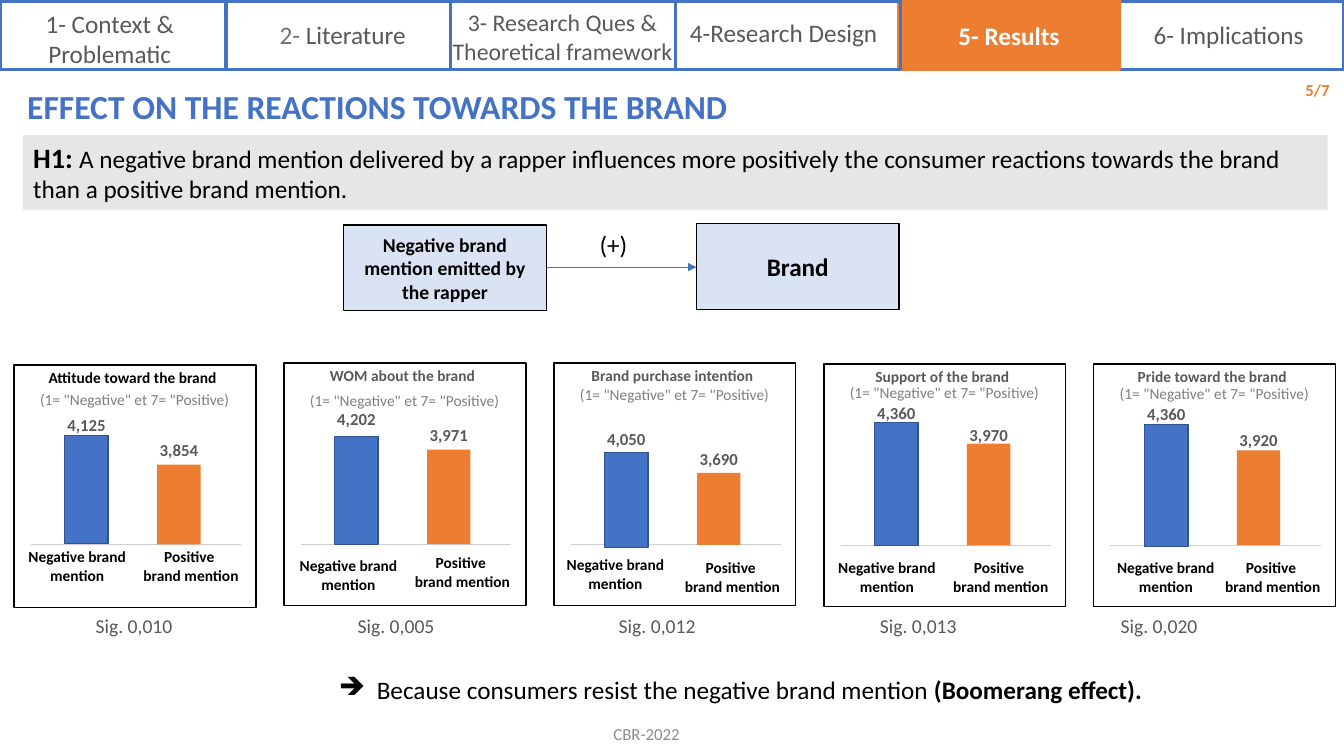
"""Build the results slide on consumer reactions towards the brand."""
from dataclasses import dataclass

from lxml import etree
from pptx import Presentation
from pptx.dml.color import RGBColor
from pptx.enum.shapes import MSO_CONNECTOR, MSO_SHAPE
from pptx.enum.text import MSO_ANCHOR, MSO_AUTO_SIZE, PP_ALIGN
from pptx.oxml.ns import qn
from pptx.util import Pt

LEFT, CENTER, RIGHT = PP_ALIGN.LEFT, PP_ALIGN.CENTER, PP_ALIGN.RIGHT
TOP, MIDDLE = MSO_ANCHOR.TOP, MSO_ANCHOR.MIDDLE
FIT_NONE = MSO_AUTO_SIZE.NONE
RECTANGLE, PROCESS = MSO_SHAPE.RECTANGLE, MSO_SHAPE.FLOWCHART_PROCESS
STRAIGHT = MSO_CONNECTOR.STRAIGHT


@dataclass(frozen=True)
class Theme:
    """Colours and type sizes of the slide."""
    font: str = "Calibri"
    blue: str = "4472C4"
    dark_blue: str = "31538F"
    pale_blue: str = "DAE3F3"
    orange: str = "ED7D31"
    black: str = "000000"
    white: str = "FFFFFF"
    text: str = "595959"
    brown_grey: str = "757070"
    mid_grey: str = "7F7F7F"
    footer_grey: str = "8C8C8C"
    axis_grey: str = "D0CECE"
    band: str = "E7E6E6"
    title: int = 24
    lead: int = 20
    body: int = 18
    tight: int = 17
    note: int = 14
    small: int = 12
    tiny: int = 11


THEME = Theme()

TITLE = "EFFECT ON THE REACTIONS TOWARDS THE BRAND"
HYPOTHESIS = [
    ("H1: ", THEME.lead, THEME.black, True),
    ("A negative brand mention delivered by a rapper influences more positively the consumer "
     "reactions towards the brand than a positive brand mention.", THEME.body, THEME.black, False),
]
CONCLUSION = [
    ("Because consumers resist the negative brand mention ", THEME.body, THEME.black, False),
    ("(Boomerang effect).", THEME.body, THEME.black, True),
]
SCALE = '(1= "Negative" et 7= "Positive)'
NEGATIVE, POSITIVE = ["Negative brand mention"], ["Positive ", "brand mention"]

# Tab: left, width, label box (left, top, width, height), label runs
TABS = [
    (0, 162, (8.6, 2.2, 139.7, 51.1),
     [("1- Context & Problematic", THEME.body, THEME.text, False)]),
    (161.3, 160.6, (177.8, 10.1, 133.9, 28.8),
     [("2- ", THEME.body, THEME.brown_grey, False), ("Literature", THEME.body, THEME.text, False)]),
    (321.8, 160.6, (316.1, 2.2, 171.4, 48.2),
     [("3- Research Ques & Theoretical framework", THEME.tight, THEME.text, False)]),
    (482.4, 160.6, (485.3, 8.6, 149, 28.8),
     [("4-Research Design ", THEME.body, THEME.text, False)]),
    (642.2, 157.7, (653.8, 10.8, 133.9, 28.8),
     [("5- Results", THEME.body, THEME.white, True)]),
    (799.9, 159.8, (810.7, 10.1, 133.9, 28.8),
     [("6- Implications", THEME.body, THEME.text, False)]),
]
ACTIVE_TAB = 4

# Panel: heading, its colour, frame top, scale top, axis height, significance (text, left),
# bars (value, label top, bar top, bar bottom), captions (lines, left in panel, top)
PANELS = [
    ("Attitude toward the brand", THEME.black, 260.6, 275, 388.8, ("Sig. 0,010", 28.8),
     [("4,125", 293, 311, 388.1), ("3,854", 310.3, 331.9, 388.8)],
     [(NEGATIVE, 2.2, 387.4), (POSITIVE, 83.5, 387.4)]),
    ("WOM about the brand", THEME.text, 259.2, 275.8, 388.8, ("Sig. 0,005", 216),
     [("4,202", 288.7, 311.8, 388.8), ("3,971", 299.5, 321.1, 388.8)],
     [(NEGATIVE, 3.2, 393.8), (POSITIVE, 84.6, 391.7)]),
    ("Brand purchase intention", THEME.text, 259.2, 271.4, 388.8, ("Sig. 0,012", 402.5),
     [("4,050", 302.4, 323.3, 391), ("3,690", 316.8, 337.7, 389.2)],
     [(NEGATIVE, 1.1, 393.1), (POSITIVE, 84.6, 395.3)]),
    ("Support of the brand", THEME.text, 259.9, 270, 389.5, ("Sig. 0,013", 589),
     [("4,360", 284.4, 301.7, 389.5), ("3,970", 299.5, 316.8, 389.5)],
     [(NEGATIVE, 2.2, 395.3), (POSITIVE, 83.5, 395.3)]),
    ("Pride toward the brand", THEME.text, 259.9, 270.7, 389.5, ("Sig. 0,020", 761),
     [("4,360", 285.1, 303.1, 390.2), ("3,920", 303.1, 321.8, 389.5)],
     [(NEGATIVE, 8.6, 395.3), (POSITIVE, 85, 395.3)]),
]
PANEL_LEFT, PANEL_STEP, PANEL_WIDTH, PANEL_HEIGHT = 10.1, 192.8, 172.8, 173.5
BAR_OFFSETS, BAR_WIDTH, LABEL_WIDTH = (36.2, 102.2), 31, 46
BAR_STYLES = ((THEME.blue, THEME.dark_blue), (THEME.orange, None))


def write(shape, paragraphs, align=CENTER, anchor=TOP):
    """Fill a shape with paragraphs of (text, size, colour, bold) runs."""
    frame = shape.text_frame
    frame.word_wrap = True
    frame.auto_size = FIT_NONE
    frame.vertical_anchor = anchor
    for index, runs in enumerate(paragraphs):
        para = frame.add_paragraph() if index else frame.paragraphs[0]
        para.alignment = align
        for text, size, color, bold in runs:
            span = para.add_run()
            span.text = text
            span.font.name = THEME.font
            span.font.size = Pt(size)
            span.font.bold = bold
            span.font.color.rgb = RGBColor.from_string(color)
    return shape


def add_text(page, area, paragraphs, align=CENTER, anchor=TOP):
    """Add a wrapping text box."""
    return write(page.shapes.add_textbox(*map(Pt, area)), paragraphs, align, anchor)


def add_box(page, area, fill=None, line=None, weight=1, kind=RECTANGLE):
    """Add a flat shape with optional fill and outline."""
    box = page.shapes.add_shape(kind, *map(Pt, area))
    box.shadow.inherit = False
    if fill:
        box.fill.solid()
        box.fill.fore_color.rgb = RGBColor.from_string(fill)
    else:
        box.fill.background()
    if line:
        box.line.color.rgb = RGBColor.from_string(line)
        box.line.width = Pt(weight)
    else:
        box.line.fill.background()
    return box


def add_line(page, start, end, color, weight):
    """Add a straight line without shadow."""
    line = page.shapes.add_connector(STRAIGHT, *map(Pt, start + end))
    line.line.color.rgb = RGBColor.from_string(color)
    line.line.width = Pt(weight)
    etree.SubElement(line._element.spPr, qn("a:effectLst"))
    return line


def add_panel(page, left, panel):
    """Draw one framed pair of bars with its heading, captions and significance."""
    heading, color, top, scale_top, axis, (significance, sig_left), bars, captions = panel
    add_line(page, (left + 11.9, axis), (left + 162.1, axis), THEME.axis_grey, 0.75)
    for (value, label_top, bar_top, bottom), offset, style in zip(bars, BAR_OFFSETS, BAR_STYLES):
        add_box(page, (left + offset, bar_top, BAR_WIDTH, bottom - bar_top), *style)
        label_left = left + offset + (BAR_WIDTH - LABEL_WIDTH) / 2
        add_text(page, (label_left, label_top, LABEL_WIDTH, 21.6),
                 [[(value, THEME.small, THEME.text, True)]])
    add_box(page, (left, top, PANEL_WIDTH, PANEL_HEIGHT), line=THEME.black)
    add_text(page, (left - 4.7, top - 1.4, 178.6, 20.9), [[(heading, THEME.tiny, color, True)]])
    add_text(page, (left - 3.2, scale_top, 178.6, 20.9),
             [[(SCALE, THEME.tiny, THEME.mid_grey, False)]])
    for lines, offset, caption_top in captions:
        add_text(page, (left + offset, caption_top, 85.7, 33.8),
                 [[(text, THEME.tiny, THEME.black, True)] for text in lines])
    add_text(page, (sig_left, 434.9, 133.9, 24.5),
             [[(significance, THEME.note, THEME.text, False)]])


def add_relation(page):
    """Draw the cause, the effect and the arrow between them."""
    for text, size, left, top in (
            ("Negative brand mention emitted by the rapper", THEME.note, 245.5, 160.6),
            ("Brand", THEME.body, 497.5, 159.8)):
        box = add_box(page, (left, top, 144.7, 61.2), THEME.pale_blue, THEME.black)
        write(box, [[(text, size, THEME.black, True)]], anchor=MIDDLE)
    arrow = add_line(page, (391, 190.8), (497.5, 190.8), THEME.blue, 0.5)
    etree.SubElement(arrow.line._get_or_add_ln(), qn("a:tailEnd"), type="triangle")
    add_text(page, (421.2, 160.6, 53.3, 28.8), [[("(+)", THEME.body, THEME.black, False)]], LEFT)


def add_conclusion(page):
    """Write the closing statement with its arrow bullet."""
    box = add_text(page, (226.1, 478.1, 601.9, 28.8), [CONCLUSION], LEFT)
    settings = box.text_frame.paragraphs[0]._p.get_or_add_pPr()
    settings.set("marL", str(Pt(36)))
    settings.set("indent", str(-Pt(27)))
    bullet_color = etree.SubElement(settings, qn("a:buClr"))
    etree.SubElement(bullet_color, qn("a:srgbClr"), val=THEME.black)
    etree.SubElement(settings, qn("a:buChar"), char="➔")


def main():
    """Assemble and save the slide."""
    deck = Presentation()
    deck.slide_width, deck.slide_height = Pt(960), Pt(540)
    page = deck.slides.add_slide(deck.slide_layouts[5])
    title = page.shapes.title
    title.left, title.top, title.width, title.height = map(Pt, (12.2, 57.6, 909.4, 36))
    write(title, [[(TITLE, THEME.title, THEME.blue, True)]], LEFT)
    band = add_box(page, (16.6, 96.5, 931.7, 53.3), THEME.band)
    write(band, [HYPOTHESIS], LEFT)
    add_relation(page)
    for index, panel in enumerate(PANELS):
        add_panel(page, PANEL_LEFT + index * PANEL_STEP, panel)
    add_conclusion(page)
    for index, (left, width, _, _) in reversed(list(enumerate(TABS))):
        style = (THEME.orange, THEME.orange) if index == ACTIVE_TAB else (None, THEME.blue)
        add_box(page, (left, 0.7, width, 49), *style, 2.25, PROCESS)
    for _, _, area, runs in TABS:
        add_text(page, area, [runs])
    add_text(page, (914.4, 49.7, 42.5, 28.8),
             [[("5/7", THEME.small, THEME.orange, True)]], RIGHT, MIDDLE)
    footer = add_text(page, (430.6, 513.4, 62.6, 21.6),
                      [[("CBR-2022", THEME.small, THEME.footer_grey, False)]])
    footer.text_frame.word_wrap = False
    deck.save("out.pptx")


if __name__ == "__main__":
    main()
